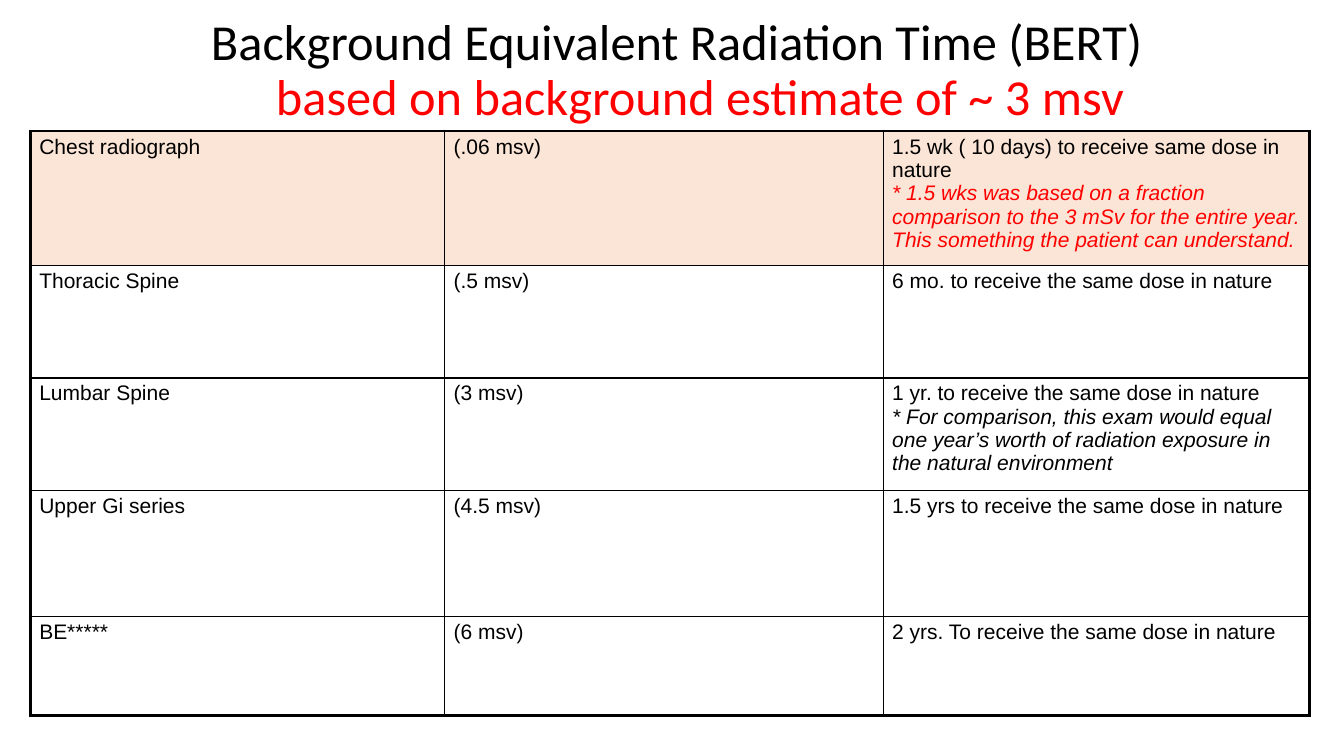
from lxml import etree
from pptx import Presentation
from pptx.dml.color import RGBColor
from pptx.enum import text as t
from pptx.oxml import ns
from pptx.util import Inches, Pt

BLACK, RED, PEACH = "000000", "FF0000", "FBE5D6"
TITLE = [("Background Equivalent Radiation Time (BERT)", BLACK),
         ("based on background estimate of ~ 3 msv", RED)]
COLS = [4.11, 4.35, 4.23]
ROWS = [1.19, 1.12, 1.12, 1.25, 0.98]
EXAMS = [
    ("Chest radiograph", "(.06 msv)",
     "1.5 wk ( 10 days) to receive same dose in nature",
     "* 1.5 wks was based on a fraction comparison to the 3 mSv for the "
     "entire year. This something the patient can understand."),
    ("Thoracic Spine", "(.5 msv)", "6 mo. to receive the same dose in nature"),
    ("Lumbar Spine", "(3 msv)", "1 yr. to receive the same dose in nature",
     "* For comparison, this exam would equal one year’s worth of radiation "
     "exposure in the natural environment"),
    ("Upper Gi series", "(4.5 msv)",
     "1.5 yrs to receive the same dose in nature"),
    ("BE*****", "(6 msv)", "2 yrs. To receive the same dose in nature"),
]


def paint(code):
    """Turn a hex string into a colour."""
    return RGBColor.from_string(code)


def write(para, words, face, size, color, slant=False):
    """Add one styled run to a paragraph."""
    run = para.add_run()
    run.text = words
    font = run.font
    font.name, font.size, font.italic = face, Pt(size), slant
    font.color.rgb = paint(color)


def border(cell, side, width):
    """Draw one solid black edge of a cell."""
    props = cell._tc.get_or_add_tcPr()
    line = etree.SubElement(props, ns.qn("a:ln" + side), w=str(Pt(width)))
    fill = etree.SubElement(line, ns.qn("a:solidFill"))
    etree.SubElement(fill, ns.qn("a:srgbClr"), val=BLACK)


def head(slide, left, top, width, height):
    """Place the two-line title, its first line set left of centre."""
    shift = Inches(0.46)
    frame = slide.shapes.add_textbox(
        Inches(left), Inches(top), Inches(width), Inches(height)).text_frame
    frame.word_wrap = True
    frame.vertical_anchor = t.MSO_ANCHOR.MIDDLE
    frame.margin_right = Inches(0.1) + shift
    for i, (words, color) in enumerate(TITLE):
        para = frame.add_paragraph() if i else frame.paragraphs[0]
        para.alignment = t.PP_ALIGN.CENTER
        para.line_spacing = 0.9
        if i:
            para._p.get_or_add_pPr().set("marL", str(shift))
        write(para, words, "Calibri", 36, color)


def entry(cell, lines, row, col):
    """Fill one table cell, with a thick edge on the outside of the grid."""
    cell.margin_left = cell.margin_right = Inches(0.09)
    cell.margin_top = cell.margin_bottom = Inches(0.04)
    outer = {"L": col == 0, "R": col == len(COLS) - 1,
             "T": row == 0, "B": row == len(ROWS) - 1}
    for side, edge in outer.items():
        border(cell, side, 2.25 if edge else 1)
    if row == 0:
        cell.fill.solid()
        cell.fill.fore_color.rgb = paint(PEACH)
    else:
        cell.fill.background()
    frame = cell.text_frame
    for i, words in enumerate(lines):
        para = frame.add_paragraph() if i else frame.paragraphs[0]
        color = RED if i and row == 0 else BLACK
        write(para, words, "Arial", 15, color, i > 0)


def grid(slide, left, top):
    """Place the table of exams, doses and equivalent times."""
    table = slide.shapes.add_table(
        len(ROWS), len(COLS), Inches(left), Inches(top),
        Inches(sum(COLS)), Inches(sum(ROWS))).table
    table.first_row = table.horz_banding = False
    for col, width in enumerate(COLS):
        table.columns[col].width = Inches(width)
    for row, (exam, dose, *time) in enumerate(EXAMS):
        table.rows[row].height = Inches(ROWS[row])
        for col, lines in enumerate(([exam], [dose], time)):
            entry(table.cell(row, col), lines, row, col)


def main():
    """Build and save the slide."""
    deck = Presentation()
    deck.slide_width, deck.slide_height = Inches(13.33), Inches(7.5)
    slide = deck.slides.add_slide(deck.slide_layouts[6])
    head(slide, 1.55, 0.25, 10.79, 0.92)
    grid(slide, 0.3, 1.3)
    deck.save("out.pptx")


if __name__ == "__main__":
    main()
